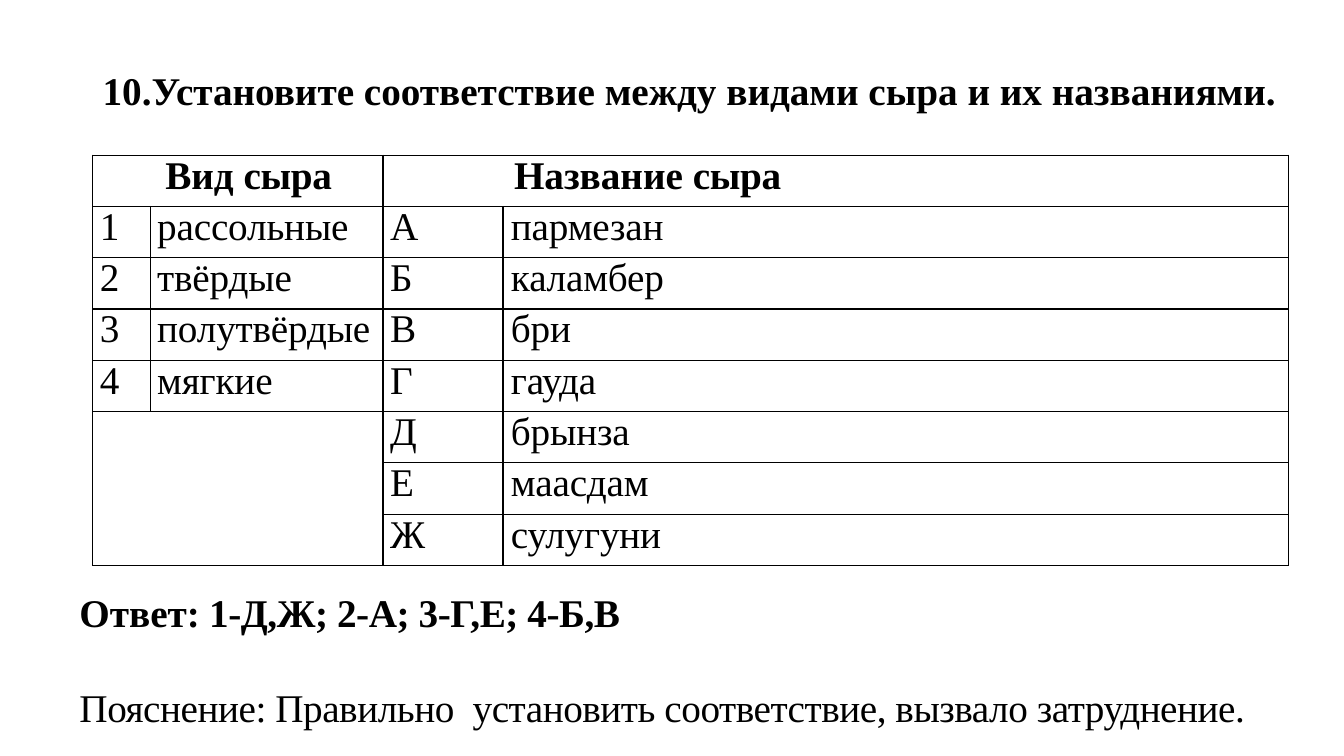
from pptx import Presentation
from pptx.dml.color import RGBColor
from pptx.enum import text
from pptx.oxml import parse_xml
from pptx.oxml.ns import nsdecls
from pptx.util import Pt

# A run is (text, bold, letter spacing in points)
QUESTION = [("10.Установите соответствие между видами сыра и их названиями.", True, 0)]
HEADINGS = [("Вид ", 0, 51.84), ("Название ", 2, 93.6)]  # word, column, indent
HEADING_END = "сыра"
KINDS = ["рассольные", "твёрдые", "полутвёрдые", "мягкие"]
CHEESES = [
    ("А", "пармезан"),
    ("Б", "каламбер"),
    ("В", "бри"),
    ("Г", "гауда"),
    ("Д", "брынза"),
    ("Е", "маасдам"),
    ("Ж", "сулугуни"),
]
ANSWER = [("Ответ:", True, 0), (" 1-Д,Ж; 2-А; 3-Г,Е; 4-Б,В", True, -0.3)]
EXPLANATION = [
    ("Пояснение: Правильно  установить соответствие, вызвало затруднение.", False, -0.3)
]

THEME = {
    "font": "Times New Roman",
    "size": Pt(28),
    "ink": RGBColor(0, 0, 0),
    "border": Pt(1),
    "cell_line": Pt(30.2),
    "gap": Pt(34.2),
}
SLIDE = (Pt(960), Pt(540))
QUESTION_BOX = (66.24, 43.92, 861.84, 398.16)
ANSWER_BOX = (49.68, 416.88, 856.8, 108.72)
TABLE_AT = (66.24, 110.88)
COLUMNS = [41.04, 166.32, 85.68, 560.88]
INDENTS = [5.04, 5.04, 5.04, 5.76]
ROW_HEIGHT = 36.63
ROWS = len(CHEESES) + 1


def write(para, runs, **layout):
    for name, value in layout.items():
        setattr(para, name, value)
    for words, bold, spacing in runs:
        span = para.add_run()
        span.text = words
        span.font.color.rgb = THEME["ink"]
        for name, value in {"name": THEME["font"], "size": THEME["size"], "bold": bold}.items():
            setattr(span.font, name, value)
        if spacing:
            span.font._element.set("spc", str(round(spacing * 100)))


def add_text(page, place, paragraphs):
    frame = page.shapes.add_textbox(*map(Pt, place)).text_frame
    frame.word_wrap = True
    for index, runs in enumerate(paragraphs):
        if index:
            write(frame.add_paragraph(), runs, space_before=THEME["gap"])
        else:
            write(frame.paragraphs[0], runs)


def frame_cell(cell):
    """Give a cell no margins, no fill and a thin border on every side."""
    for side in ("left", "right", "top", "bottom"):
        setattr(cell, f"margin_{side}", 0)
    cell.vertical_anchor = text.MSO_ANCHOR.TOP
    properties = cell._tc.get_or_add_tcPr()
    for edge in ("lnL", "lnR", "lnT", "lnB"):
        properties.append(parse_xml(
            f'<a:{edge} {nsdecls("a")} w="{THEME["border"]}"><a:solidFill>'
            f'<a:srgbClr val="{THEME["ink"]}"/></a:solidFill></a:{edge}>'
        ))
    cell.fill.background()


def fill_cell(cell, runs, indent):
    para = cell.text_frame.paragraphs[0]
    para._p.get_or_add_pPr().set("marL", str(Pt(indent)))
    write(para, runs, line_spacing=THEME["cell_line"])


def add_cheese_table(page):
    size = (sum(COLUMNS), ROW_HEIGHT * ROWS)
    table = page.shapes.add_table(ROWS, len(COLUMNS), *map(Pt, TABLE_AT + size)).table
    table.first_row = table.horz_banding = False
    for column, width in zip(table.columns, COLUMNS):
        column.width = Pt(width)
    for row in table.rows:
        row.height = Pt(ROW_HEIGHT)
    for cell in table.iter_cells():
        frame_cell(cell)

    for word, column, indent in HEADINGS:
        heading = table.cell(0, column)
        heading.merge(table.cell(0, column + 1))
        fill_cell(heading, [(word, True, 0), (HEADING_END, True, -0.2)], indent)
    table.cell(len(KINDS) + 1, 0).merge(table.cell(ROWS - 1, 1))

    numbered = [(str(number), kind) for number, kind in enumerate(KINDS, 1)]
    for first_column, pairs in ((0, numbered), (2, CHEESES)):
        for row, pair in enumerate(pairs, 1):
            for column, (words, spacing) in enumerate(zip(pair, (-0.5, -0.1)), first_column):
                fill_cell(table.cell(row, column), [(words, False, spacing)], INDENTS[column])


def main():
    deck = Presentation()
    deck.slide_width, deck.slide_height = SLIDE
    page = deck.slides.add_slide(deck.slide_layouts[6])
    add_text(page, QUESTION_BOX, [QUESTION])
    add_cheese_table(page)
    add_text(page, ANSWER_BOX, [ANSWER, EXPLANATION])
    deck.save("out.pptx")


if __name__ == "__main__":
    main()
